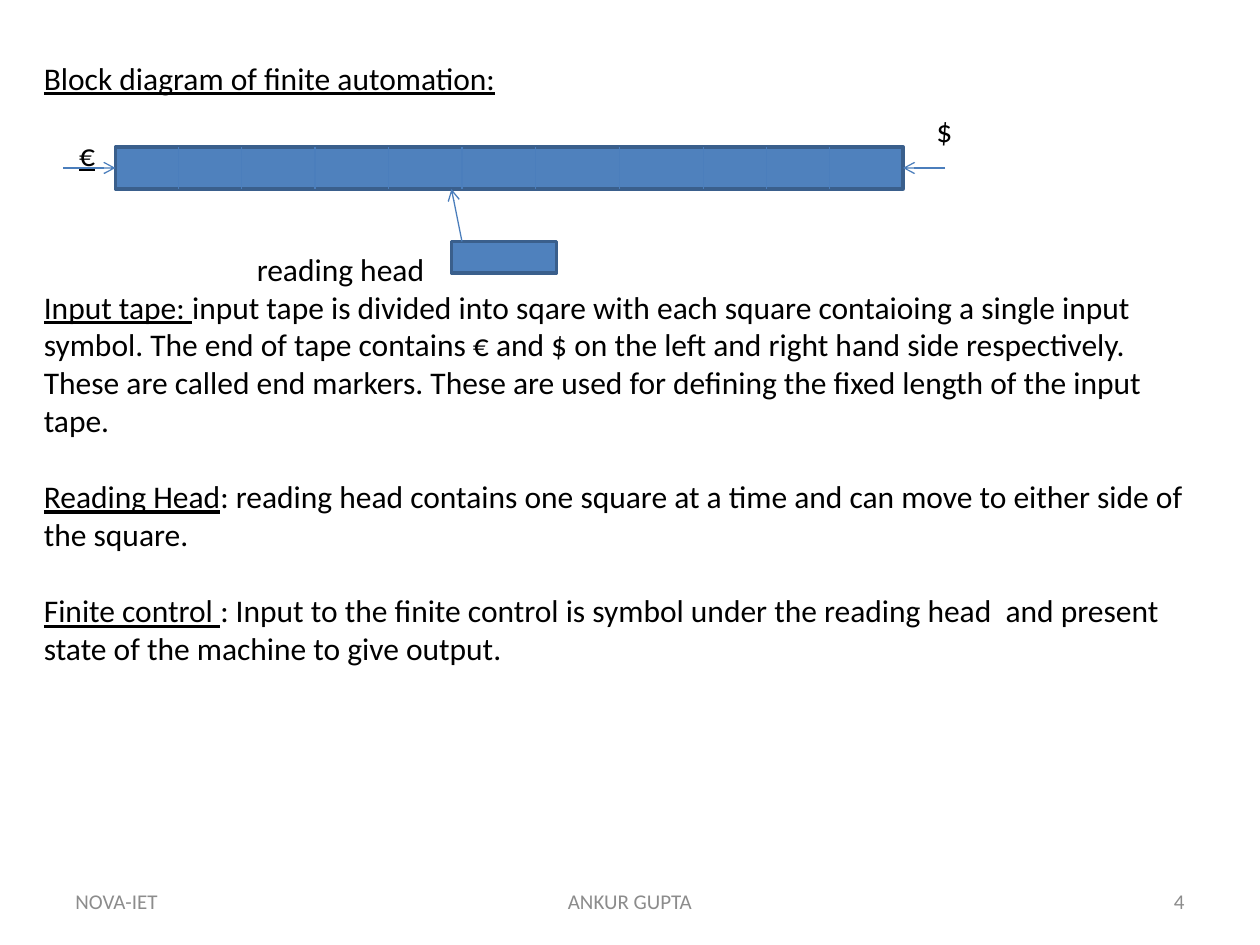
from lxml.etree import SubElement
from pptx import Presentation
from pptx.dml.color import RGBColor
from pptx.enum.shapes import MSO_CONNECTOR as Connector, MSO_SHAPE as Shape
from pptx.enum.text import MSO_ANCHOR as Anchor, PP_ALIGN as Align
from pptx.oxml.ns import qn
from pptx.util import Inches, Pt

COLORS = {"text": "000000", "footer": "8C8C8C", "fill": "4F81BD",
          "outline": "3A5F8C", "line": "4B7EBC"}
FONT = "Calibri"
CELLS_PER_INCH = 12
LINE_HEIGHT = 22

# (underlined part, plain part, blank lines above, tab stop in inches)
BODY = [
    ("Block diagram of finite automation:", "", 0, None),
    ("\t€", "", 1, 0.28),
    ("", "\treading head", 2, 1.69),
    ("Input tape: ", "input tape is divided into sqare with each square contaioing a "
     "single input symbol. The end of tape contains € and $ on the left and right hand "
     "side respectively. These are called end markers. These are used for defining the "
     "fixed length of the input tape.", 0, None),
    ("Reading Head", ": reading head contains one square at a time and can move to "
     "either side of the square.", 1, None),
    ("Finite control ", ": Input to the finite control is symbol under the reading head  "
     "and present state of the machine to give output.", 1, None),
]
FOOTER = [("NOVA-IET", 6, 28, Align.LEFT), ("4", 86, 28, Align.RIGHT),
          ("ANKUR GUPTA", 41, 38, Align.CENTER)]
TAPE = (11, 14, 75, 4)
HEAD = (43, 23, 10, 3)
DIVIDERS = [17, 23, 30, 37, 44, 51, 59, 67, 73, 79]


def grid(*cells):
    return [Inches(cell / CELLS_PER_INCH) for cell in cells]


def color(name):
    return RGBColor.from_string(COLORS[name])


def add_box(slide, cells, anchor=Anchor.TOP):
    frame = slide.shapes.add_textbox(*grid(*cells)).text_frame
    frame.word_wrap = True
    frame.vertical_anchor = anchor
    return frame


def write(paragraph, text, size=18, fill="text", underline=False, align=Align.LEFT):
    paragraph.alignment = align
    run = paragraph.add_run()
    run.text = text
    run.font.name, run.font.size = FONT, Pt(size)
    run.font.underline = underline
    run.font.color.rgb = color(fill)


def add_body(slide):
    frame = add_box(slide, (3, 5, 113, 70.3))
    for index, (underlined, plain, blank_lines, tab) in enumerate(BODY):
        paragraph = frame.add_paragraph() if index else frame.paragraphs[0]
        paragraph.space_before = Pt(blank_lines * LINE_HEIGHT)
        for text, underline in ((underlined, True), (plain, False)):
            if text:
                write(paragraph, text, underline=underline)
        if tab:
            tabs = SubElement(paragraph._p.get_or_add_pPr(), qn("a:tabLst"))
            SubElement(tabs, qn("a:tab"), pos=str(Inches(tab)), algn="l")


def add_block(slide, cells):
    shape = slide.shapes.add_shape(Shape.RECTANGLE, *grid(*cells))
    shape.shadow.inherit = False
    shape.fill.solid()
    shape.fill.fore_color.rgb = color("fill")
    shape.line.color.rgb = color("outline")
    shape.line.width = Pt(2)
    return shape


def add_line(slide, start, end, arrow=False):
    connector = slide.shapes.add_connector(Connector.STRAIGHT, *grid(*start, *end))
    connector.line.color.rgb = color("line")
    connector.line.width = Pt(0.75)
    if arrow:
        SubElement(connector.line._get_or_add_ln(), qn("a:tailEnd"), type="arrow")
    SubElement(connector._element.spPr, qn("a:effectLst"))
    return connector


def main():
    """Build the finite automaton block diagram slide."""
    presentation = Presentation()
    presentation.slide_width, presentation.slide_height = Inches(10), Inches(7.5)
    slide = presentation.slides.add_slide(presentation.slide_layouts[6])

    add_body(slide)
    left, top, width, height = TAPE
    bottom, middle = top + height, top + height / 2
    tape = add_block(slide, TAPE)
    for column in DIVIDERS:
        add_line(slide, (column, top), (column, bottom))
    for start, end, side in ((6, left, 1), (90, left + width, 3)):
        arrow = add_line(slide, (start, middle), (end, middle), arrow=True)
        arrow.end_connect(tape, side)
    write(add_box(slide, (88, 10, 4, 4.8)).paragraphs[0], "$")

    add_block(slide, HEAD)
    add_line(slide, (HEAD[0] + 1, HEAD[1]), (HEAD[0], bottom), arrow=True)

    for text, column, span, align in FOOTER:
        frame = add_box(slide, (column, 83.4, span, 4.8), Anchor.MIDDLE)
        write(frame.paragraphs[0], text, size=12, fill="footer", align=align)
    presentation.save("out.pptx")


if __name__ == "__main__":
    main()
